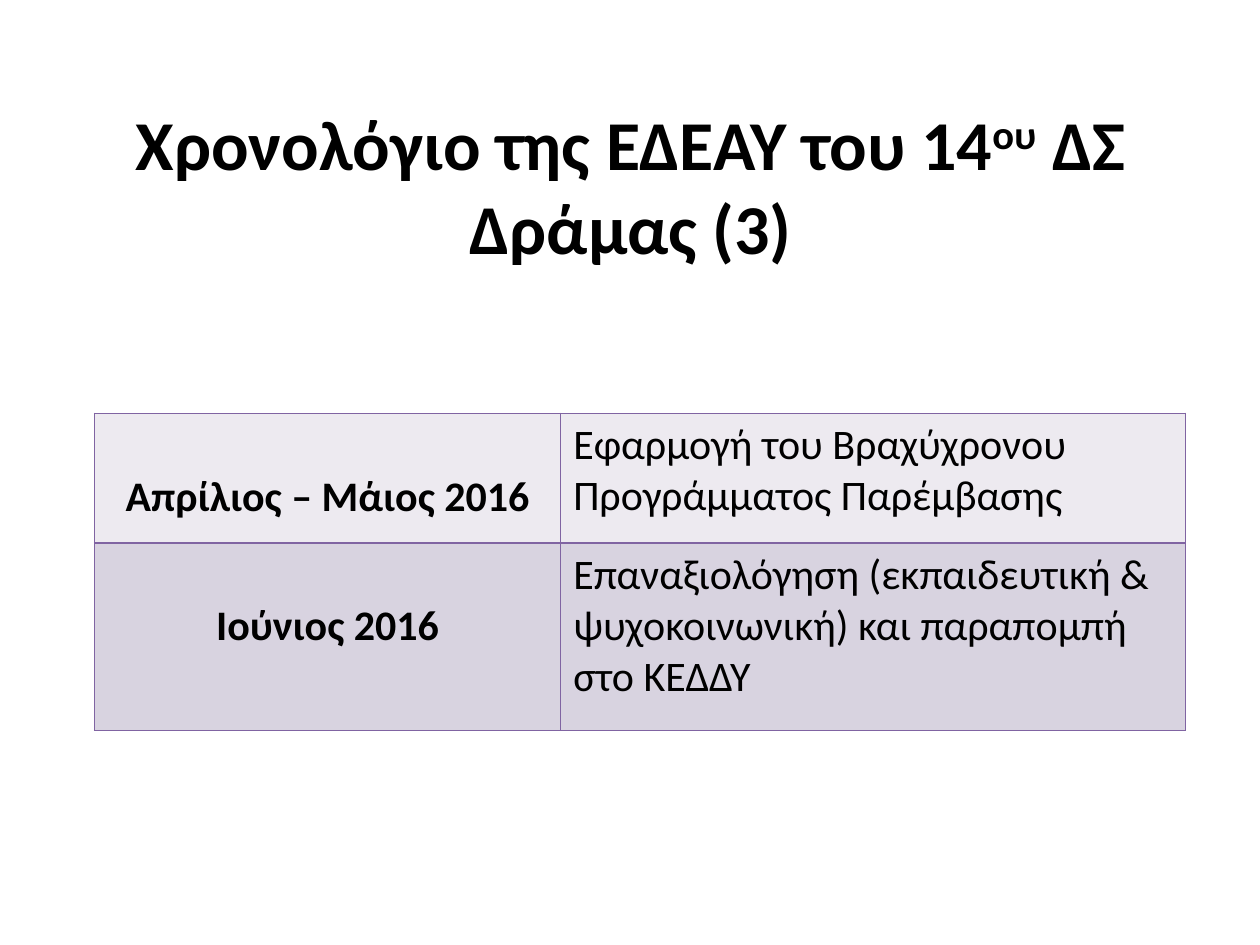
from lxml import etree
from pptx import Presentation
from pptx.dml.color import RGBColor
from pptx.enum.text import MSO_ANCHOR, PP_ALIGN
from pptx.oxml.ns import qn
from pptx.util import Inches, Pt

CENTER, LEFT = PP_ALIGN.CENTER, PP_ALIGN.LEFT
MIDDLE = MSO_ANCHOR.MIDDLE
BORDER = "8064A2"


def add_run(paragraph, text, size, bold):
    run = paragraph.add_run()
    run.text = text
    run.font.name = "Calibri"
    run.font.size = Pt(size)
    run.font.bold = bold
    run.font.color.rgb = RGBColor.from_string("000000")
    return run


def add_borders(cell):
    properties = cell._tc.get_or_add_tcPr()
    for position, side in enumerate(("lnL", "lnR", "lnT", "lnB")):
        line = etree.Element(qn(f"a:{side}"), w=str(Pt(1)))
        fill = etree.SubElement(line, qn("a:solidFill"))
        etree.SubElement(fill, qn("a:srgbClr"), val=BORDER)
        properties.insert(position, line)


prs = Presentation()
prs.slide_width, prs.slide_height = Inches(10), Inches(7.5)
slide = prs.slides.add_slide(prs.slide_layouts[5])

title = slide.shapes.title
title.left, title.top = Inches(0.2), Inches(0.84)
title.width, title.height = Inches(9.61), Inches(1.25)
title.text_frame.vertical_anchor = MIDDLE
heading = title.text_frame.paragraphs[0]
heading.alignment = CENTER
add_run(heading, "Χρονολόγιο της ΕΔΕΑΥ του 14", 40, True)
ordinal = add_run(heading, "ου", 40, True)
ordinal.font._element.set("baseline", "30000")
add_run(heading, " ΔΣ Δράμας (3)", 40, True)

timeline = [
    ("Απρίλιος – Μάιος 2016",
     "Εφαρμογή του Βραχύχρονου Προγράμματος Παρέμβασης", 1.03, "EDEAF0"),
    ("Ιούνιος 2016",
     "Επαναξιολόγηση (εκπαιδευτική & ψυχοκοινωνική) και παραπομπή στο ΚΕΔΔΥ",
     1.49, "D8D3E0"),
]
table = slide.shapes.add_table(
    len(timeline), 2, Inches(0.75), Inches(3.28), Inches(8.66), Inches(2.52)
).table
table.first_row = False
table.columns[0].width = Inches(3.7)
table.columns[1].width = Inches(4.96)

for row, (period, activity, height, shade) in enumerate(timeline):
    table.rows[row].height = Inches(height)
    columns = [(period, CENTER, True, 0.46), (activity, LEFT, False, 0.05)]
    for column, (text, alignment, bold, top) in enumerate(columns):
        cell = table.cell(row, column)
        cell.margin_top = Inches(top)
        cell.fill.solid()
        cell.fill.fore_color.rgb = RGBColor.from_string(shade)
        add_borders(cell)
        paragraph = cell.text_frame.paragraphs[0]
        paragraph.alignment = alignment
        add_run(paragraph, text, 24, bold)

prs.save("out.pptx")
